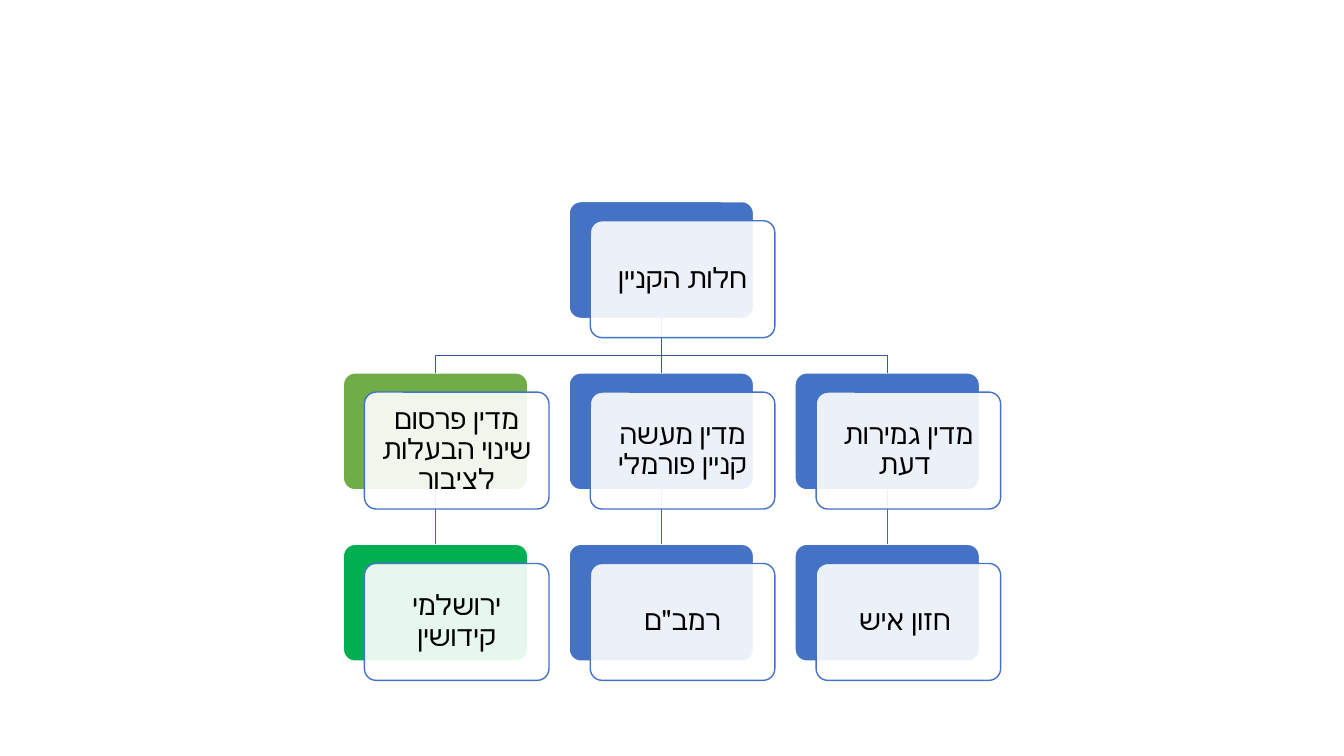
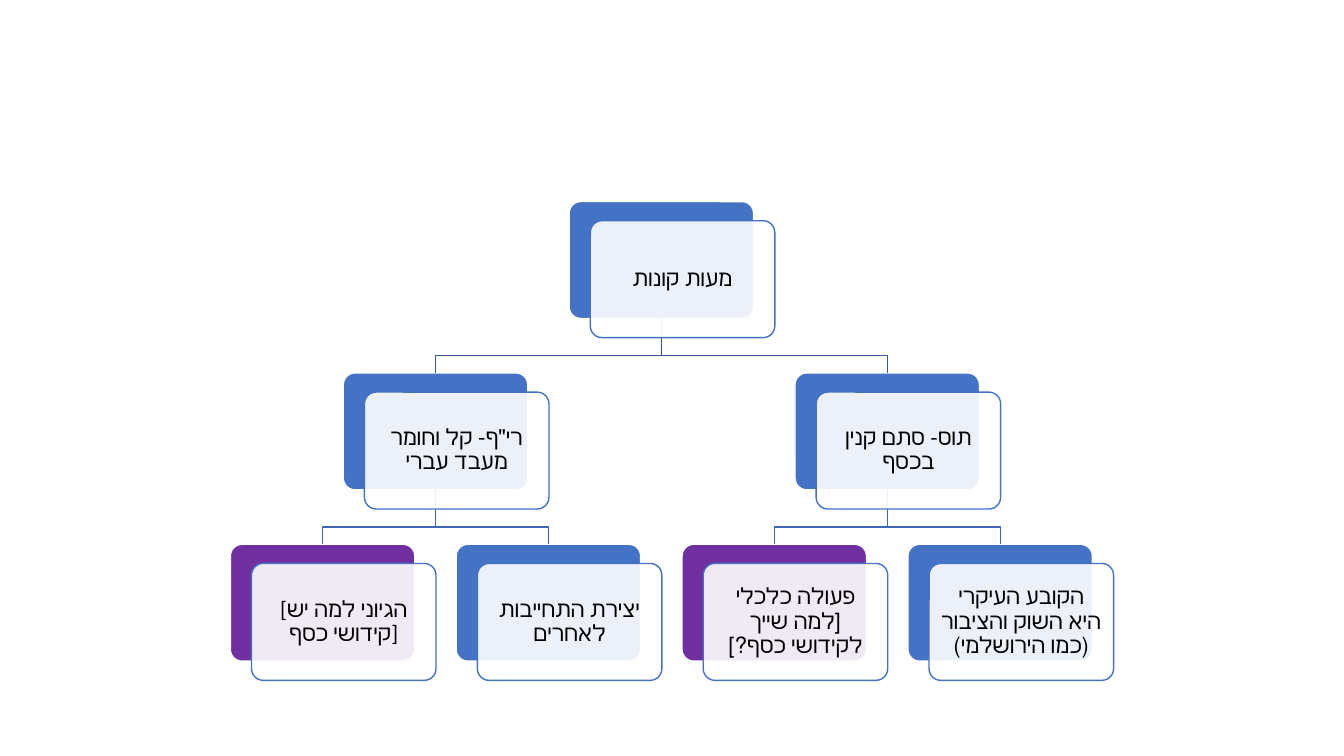
from lxml import etree
from pptx import Presentation, util as u
from pptx.dml.color import RGBColor
from pptx.enum import lang, shapes, text
from pptx.oxml import ns

# Shared style, lengths in inches
BLUE, GREEN, EMERALD, PURPLE = "4472C4", "70AD47", "00B050", "7030A0"
WHITE, BLACK = "FFFFFF", "000000"
LINK_COLORS = ["365B9D", "3E67B2"]
FONT = "Calibri"
MIDDLE, TOP = 6.56, 2.0
COLUMN, ROW = 1.12, 1.7
BOX_WIDTH, BOX_HEIGHT = 1.83, 1.16
CARD_SHIFT_X, CARD_SHIFT_Y = 0.21, 0.19
BEND = 0.37


def color(hex_string):
    return RGBColor.from_string(hex_string)


class TreeDeck:
    """Slides with a tree of layered boxes on a grid of columns and rows."""

    def __init__(self):
        self.deck = Presentation()
        self.deck.slide_width = u.Inches(13.33)
        self.deck.slide_height = u.Inches(7.5)
        self.page = None

    def add_page(self):
        self.page = self.deck.slides.add_slide(self.deck.slide_layouts[6])

    def style_line(self, shape, hex_string):
        shape.line.color.rgb = color(hex_string)
        shape.line.width = u.Pt(1)

    def add_box(self, column, row, fill, outline, shift_x=0, shift_y=0):
        left = MIDDLE + column * COLUMN - BOX_WIDTH / 2 + shift_x
        top = TOP + row * ROW + shift_y
        box = self.page.shapes.add_shape(
            shapes.MSO_SHAPE.ROUNDED_RECTANGLE, u.Inches(left), u.Inches(top),
            u.Inches(BOX_WIDTH), u.Inches(BOX_HEIGHT))
        box.adjustments[0] = 0.1
        box.shadow.inherit = False
        box.fill.solid()
        box.fill.fore_color.rgb = color(fill)
        self.style_line(box, outline)
        return box

    def add_card(self, column, row, label, size, inset):
        card = self.add_box(column, row, WHITE, BLUE, CARD_SHIFT_X, CARD_SHIFT_Y)
        # 90 % opaque fill
        fill = card.fill._xPr.find(ns.qn("a:solidFill"))
        etree.SubElement(fill[0], ns.qn("a:alpha"), val="90000")
        frame = card.text_frame
        frame.text = label
        frame.word_wrap = True
        frame.vertical_anchor = text.MSO_ANCHOR.MIDDLE
        frame.margin_left = frame.margin_right = u.Inches(inset)
        frame.margin_top = frame.margin_bottom = u.Inches(inset)
        para = frame.paragraphs[0]
        para.alignment = text.PP_ALIGN.CENTER
        para.line_spacing = 0.9
        span = para.runs[0]
        span.font.size = u.Pt(size)
        span.font.color.rgb = color(BLACK)
        span.font.name = FONT
        span.font.language_id = lang.MSO_LANGUAGE_ID.HEBREW

    def add_link(self, parent, child, hex_string):
        start_x, start_y = parent.left + parent.width // 2, parent.top + parent.height
        end_x, end_y = child.left + child.width // 2, child.top
        if start_x == end_x:
            link = self.page.shapes.add_connector(
                shapes.MSO_CONNECTOR.STRAIGHT, start_x, start_y, end_x, end_y)
            link.begin_connect(parent, 2)
            link.end_connect(child, 0)
            etree.SubElement(link._element.spPr, ns.qn("a:effectLst"))
            self.style_line(link, hex_string)
            return
        bend_y = start_y + u.Inches(BEND)
        outline = self.page.shapes.build_freeform(start_x, start_y)
        outline.add_line_segments(
            [(start_x, bend_y), (end_x, bend_y), (end_x, end_y)], close=False)
        link = outline.convert_to_shape()
        link.fill.background()
        link.shadow.inherit = False
        self.style_line(link, hex_string)

    def add_tree(self, nodes, size, inset):
        """Each node: label, fill, column, row, index of its parent."""
        self.add_page()
        boxes = [self.add_box(column, row, fill, WHITE)
                 for _, fill, column, row, _ in nodes]
        for box, (_, _, _, row, parent) in zip(boxes, nodes):
            if parent is not None:
                self.add_link(boxes[parent], box, LINK_COLORS[row - 1])
        for label, _, column, row, _ in nodes:
            self.add_card(column, row, label, size, inset)


# Contents of the trees
ACQUISITION = [
    ("חלות הקניין", BLUE, 0, 0, None),
    ("מדין גמירות דעת ", BLUE, 2, 1, 0),
    ("חזון איש ", BLUE, 2, 2, 1),
    ("מדין מעשה קניין פורמלי", BLUE, 0, 1, 0),
    ("רמב\"ם", BLUE, 0, 2, 3),
    ("מדין פרסום שינוי הבעלות לציבור", GREEN, -2, 1, 0),
    ("ירושלמי קידושין", EMERALD, -2, 2, 5),
]
MONEY = [
    ("מעות קונות", BLUE, 0, 0, None),
    ("תוס- סתם קנין בכסף", BLUE, 2, 1, 0),
    ("הקובע העיקרי היא השוק והציבור (כמו הירושלמי)", BLUE, 3, 2, 1),
    ("פעולה כלכלי [למה שייך לקידושי כסף?]", PURPLE, 1, 2, 1),
    ("רי\"ף- קל וחומר מעבד עברי", BLUE, -2, 1, 0),
    ("יצירת התחייבות לאחרים", BLUE, -1, 2, 4),
    ("[הגיוני למה יש קידושי כסף]", PURPLE, -3, 2, 4),
]


def main():
    trees = TreeDeck()
    trees.add_tree(ACQUISITION, size=20, inset=0.08)
    trees.add_tree(MONEY, size=16, inset=0.07)
    trees.deck.save("out.pptx")


if __name__ == "__main__":
    main()
